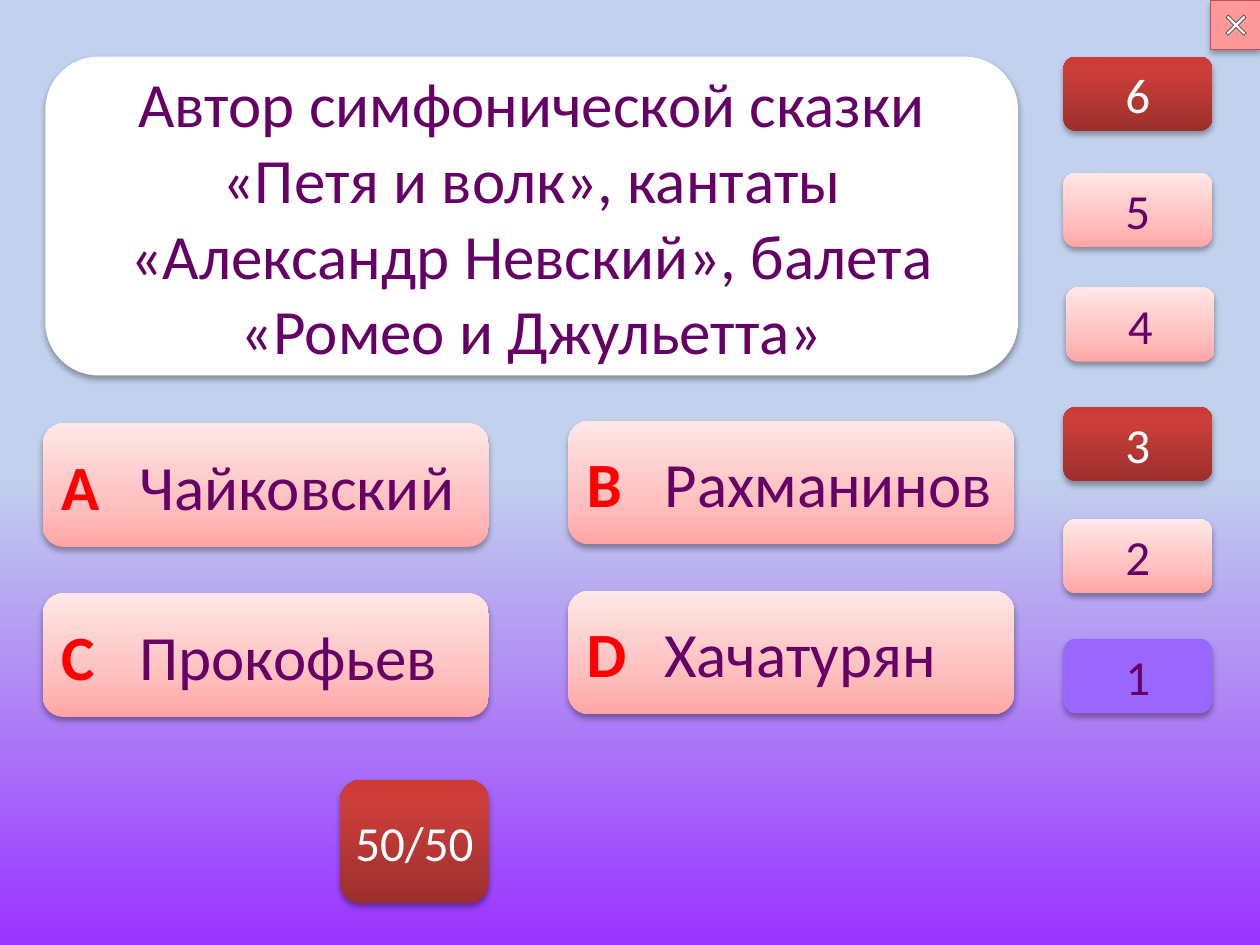
from lxml.etree import SubElement
from copy import deepcopy
from pptx import Presentation
from pptx.dml.color import RGBColor
from pptx.enum.shapes import MSO_SHAPE
from pptx.enum.text import MSO_ANCHOR, PP_ALIGN
from pptx.oxml.ns import qn
from pptx.util import Inches, Pt

COLORS = {
    "white": "FFFFFF", "plum": "660066", "letter": "FF0000", "violet": "9966FF",
    "close": "FF9999", "cross_edge": "5F5F5F", "close_edge": "C0504D", "shadow": "000000",
}
BACKGROUND = [(0, "9933FF"), (0.5, "C2D1ED")]
PINK = [(0, "FFA6A5"), (0.35, "FFC0BF"), (1, "FFE7E7")]
RED = [(0, "9C2F2D"), (0.8, "CB3E3A"), (1, "CE3B37")]
SOFT_SHADOW = (32, 3.5, 2.2)
HINT_SHADOW = (35, 3.15, 1.8)

QUESTION = ("Автор симфонической сказки «Петя и волк», кантаты "
            "«Александр Невский», балета «Ромео и Джульетта»")
ANSWERS = [("А", "Чайковский"), ("В", "Рахманинов"), ("C", "Прокофьев"), ("D", "Хачатурян")]
LEVELS = [
    ("6", 8.44, 0.45, RED, "white"),
    ("5", 8.44, 1.37, PINK, "plum"),
    ("4", 8.46, 2.28, PINK, "plum"),
    ("3", 8.44, 3.23, RED, "white"),
    ("2", 8.44, 4.12, PINK, "plum"),
    ("1", 8.44, 5.07, "violet", "plum"),
]
HINT = "50/50"


def rgb(name):
    return RGBColor.from_string(COLORS[name])


def paint_gradient(fill, owner, stops):
    fill.gradient()
    fill.gradient_angle = 90
    stop_list = owner.find(".//" + qn("a:gsLst"))
    while len(stop_list) < len(stops):
        stop_list.append(deepcopy(stop_list[-1]))
    for stop, (position, color) in zip(fill.gradient_stops, stops):
        stop.position = position
        stop.color.rgb = RGBColor.from_string(color)


def add_panel(kind, box, fill=None, edge=None, shadow=None):
    panel = slide.shapes.add_shape(kind, *map(Inches, box))
    panel.shadow.inherit = False
    if fill is None:
        panel.fill.background()
    elif isinstance(fill, list):
        paint_gradient(panel.fill, panel._element.spPr, fill)
    else:
        panel.fill.solid()
        panel.fill.fore_color.rgb = rgb(fill)
    if edge:
        panel.line.color.rgb = rgb(edge)
        panel.line.width = Pt(0.5)
    else:
        panel.line.fill.background()
    if shadow:
        alpha, blur, distance = shadow
        effects = panel._element.spPr.find(qn("a:effectLst"))
        outer = SubElement(effects, qn("a:outerShdw"), blurRad=str(Pt(blur)),
                           dist=str(Pt(distance)), dir="5400000", rotWithShape="0")
        tone = SubElement(outer, qn("a:srgbClr"), val=COLORS["shadow"])
        SubElement(tone, qn("a:alpha"), val=str(alpha * 1000))
    return panel


def write(panel, runs, size, align=PP_ALIGN.CENTER, wrap=False, tab=None):
    frame = panel.text_frame
    frame.word_wrap = wrap
    frame.vertical_anchor = MSO_ANCHOR.MIDDLE
    paragraph = frame.paragraphs[0]
    paragraph.alignment = align
    if tab:
        tabs = SubElement(paragraph._p.get_or_add_pPr(), qn("a:tabLst"))
        SubElement(tabs, qn("a:tab"), pos=str(Inches(tab)), algn="l")
    for text, color, bold in runs:
        run = paragraph.add_run()
        run.text = text
        style = {"name": "Calibri", "size": Pt(size), "bold": bold}
        for key, value in style.items():
            setattr(run.font, key, value)
        run.font.color.rgb = rgb(color)


presentation = Presentation()
presentation.slide_width = Inches(10)
presentation.slide_height = Inches(7.5)
slide = presentation.slides.add_slide(presentation.slide_layouts[6])
paint_gradient(slide.background.fill, slide._element, BACKGROUND)

close_box = (9.61, 0, 0.39, 0.39)
add_panel(MSO_SHAPE.ACTION_BUTTON_CUSTOM, close_box, "close", shadow=SOFT_SHADOW)
cross = add_panel(MSO_SHAPE.CROSS, (9.71, 0.1, 0.2, 0.2), "white", "cross_edge")
cross.adjustments[0] = 0.435
cross.rotation = 45
add_panel(MSO_SHAPE.ACTION_BUTTON_CUSTOM, close_box, edge="close_edge")

ROUNDED = MSO_SHAPE.ROUNDED_RECTANGLE
question = add_panel(ROUNDED, (0.36, 0.45, 7.72, 2.53), "white", shadow=SOFT_SHADOW)
write(question, [(QUESTION, "plum", False)], 36, wrap=True)

for index, (letter, name) in enumerate(ANSWERS):
    row, column = divmod(index, 2)
    box = (0.34 + 4.17 * column, 3.36 + 1.35 * row - 0.02 * column, 3.54, 0.98)
    answer = add_panel(ROUNDED, box, PINK, shadow=SOFT_SHADOW)
    write(answer, [(letter + "\t", "letter", True), (name, "plum", False)], 36,
          align=PP_ALIGN.LEFT, tab=0.62)

hint = add_panel(ROUNDED, (2.7, 6.19, 1.18, 0.98), RED, shadow=HINT_SHADOW)
write(hint, [(HINT, "white", False)], 28)

for number, left, top, fill, color in LEVELS:
    level = add_panel(ROUNDED, (left, top, 1.18, 0.59), fill, shadow=SOFT_SHADOW)
    write(level, [(number, color, False)], 28)

presentation.save("out.pptx")
